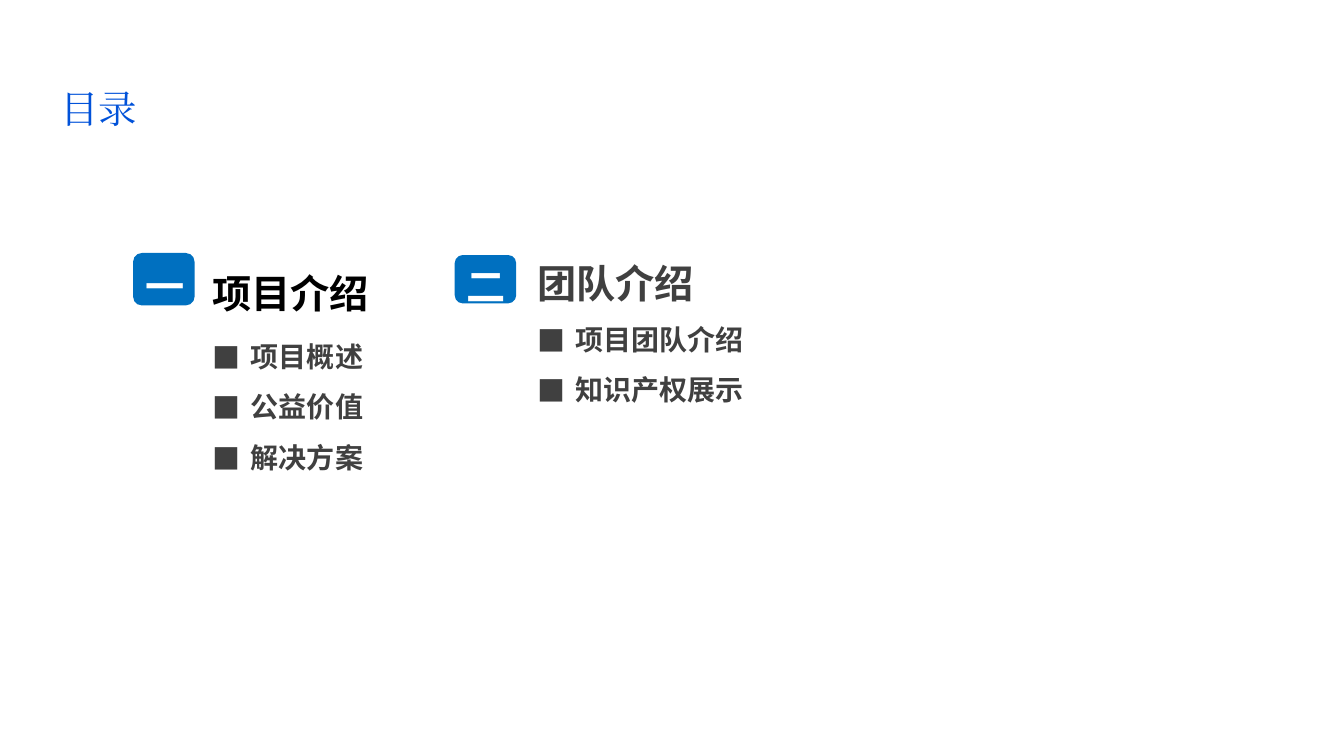
from lxml import etree
from pptx import Presentation
from pptx.dml.color import RGBColor
from pptx.enum import shapes, text
from pptx.oxml import ns
from pptx.util import Inches, Pt

COLORS = {
    "title": "0152D9",
    "badge": "0070C0",
    "body": "404040",
    "black": "000000",
    "white": "FFFFFF",
}
FONT = "Noto Sans CJK SC"
TITLE_FONT = "Times New Roman"
LEFT = text.PP_ALIGN.LEFT
CENTER = text.PP_ALIGN.CENTER


def add_bullet(paragraph):
    """Give the paragraph a square bullet with a hanging indent."""
    properties = paragraph._p.get_or_add_pPr()
    properties.set("marL", str(Inches(0.38)))
    properties.set("indent", str(-Inches(0.38)))
    etree.SubElement(properties, ns.qn("a:buFont"), typeface=FONT)
    etree.SubElement(properties, ns.qn("a:buChar"), char="■")


def write_text(frame, lines, size=28, color="body", font=FONT, bold=True,
               spacing=1.5, align=LEFT, bullets=False):
    for index, line in enumerate(lines):
        paragraph = frame.paragraphs[0] if index == 0 else frame.add_paragraph()
        if bullets:
            add_bullet(paragraph)
        paragraph.alignment = align
        paragraph.line_spacing = spacing
        paragraph.space_before = Pt(0)
        run = paragraph.add_run()
        run.text = line
        run.font.size = Pt(size)
        run.font.bold = bold
        run.font.name = font
        run.font.color.rgb = RGBColor.from_string(COLORS[color])
        east_asian = etree.SubElement(run._r.get_or_add_rPr(), ns.qn("a:ea"))
        east_asian.set("typeface", font)


def set_title(slide, title_text):
    title = slide.shapes.title
    title.left, title.top = Inches(0.6), Inches(0.71)
    title.width, title.height = Inches(1.47), Inches(1.15)
    frame = title.text_frame
    frame.margin_left = frame.margin_right = 0
    frame.margin_top = frame.margin_bottom = 0
    frame.vertical_anchor = text.MSO_ANCHOR.TOP
    frame.auto_size = text.MSO_AUTO_SIZE.NONE
    write_text(frame, [title_text], size=27.5, color="title",
               font=TITLE_FONT, bold=False, spacing=1.3)


def add_text(slide, box, lines, wrap=True, **text_format):
    shape = slide.shapes.add_textbox(*map(Inches, box))
    frame = shape.text_frame
    frame.word_wrap = wrap
    frame.auto_size = text.MSO_AUTO_SIZE.SHAPE_TO_FIT_TEXT
    write_text(frame, lines, **text_format)


def add_badge(slide, box, number):
    badge = slide.shapes.add_shape(
        shapes.MSO_SHAPE.ROUNDED_RECTANGLE, *map(Inches, box))
    badge.shadow.inherit = False
    badge.fill.solid()
    badge.fill.fore_color.rgb = RGBColor.from_string(COLORS["badge"])
    badge.line.fill.background()
    badge.text_frame.vertical_anchor = text.MSO_ANCHOR.MIDDLE
    write_text(badge.text_frame, [number], color="white", spacing=1.3, align=CENTER)


def main():
    presentation = Presentation()
    presentation.slide_width = Inches(13.33)
    presentation.slide_height = Inches(7.5)
    slide = presentation.slides.add_slide(presentation.slide_layouts[5])

    set_title(slide, "目录")

    add_badge(slide, (1.32, 2.51, 0.61, 0.52), "一")
    add_text(slide, (2.01, 2.48, 1.77, 0.65), ["项目介绍"],
             wrap=False, color="black", spacing=1.3)
    add_text(slide, (2.01, 3.15, 2.72, 2.06), ["项目概述", "公益价值", "解决方案"],
             size=20, bullets=True)

    add_badge(slide, (4.51, 2.53, 0.61, 0.48), "二")
    add_text(slide, (5.23, 2.29, 3.38, 0.72), ["团队介绍"])
    add_text(slide, (5.23, 2.98, 2.78, 1.1), ["项目团队介绍", "知识产权展示"],
             size=20, bullets=True)

    presentation.save("out.pptx")


if __name__ == "__main__":
    main()
